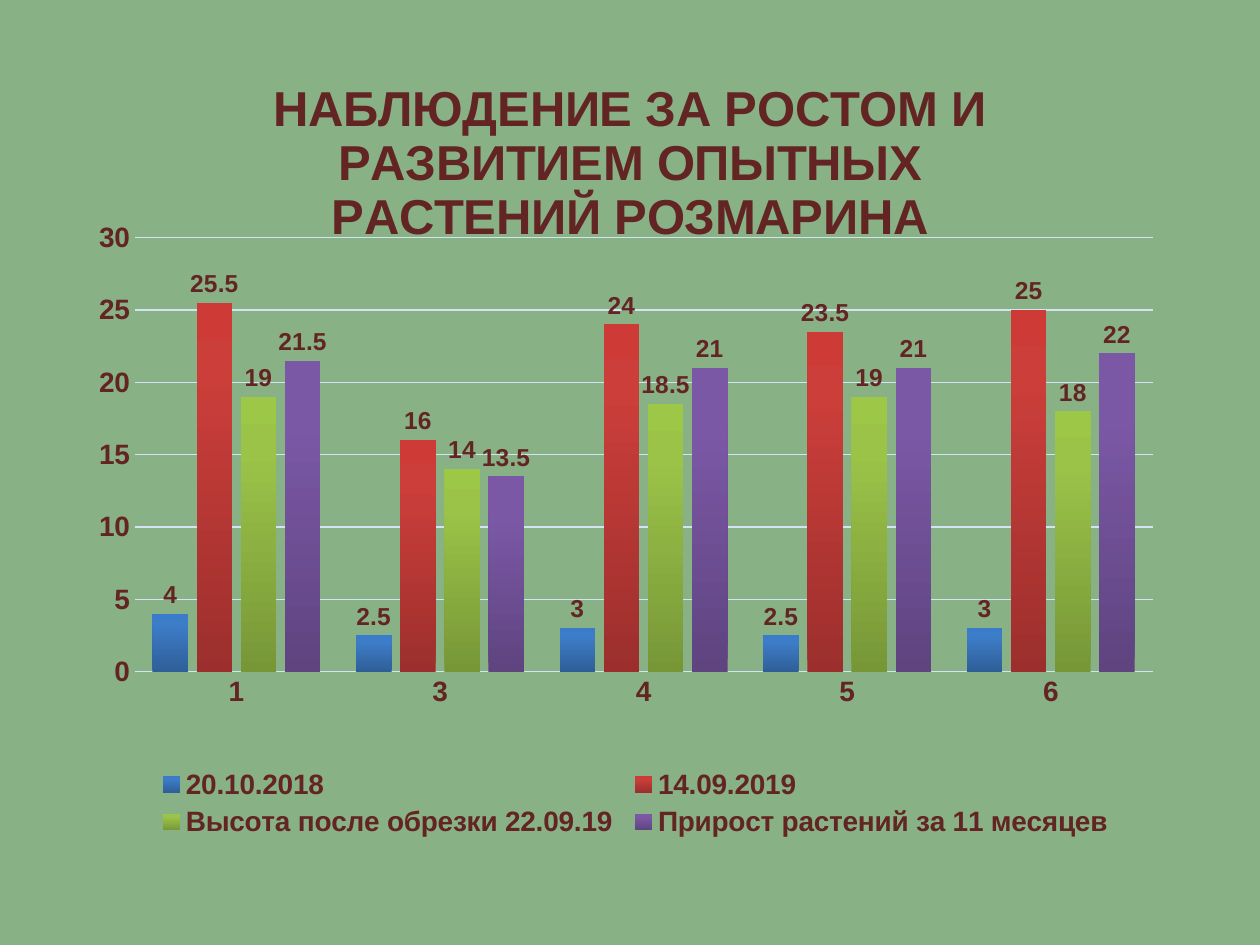
"""Build a slide with a clustered column chart of rosemary growth."""
from lxml import etree
from pptx import Presentation, util as u
from pptx.chart.data import CategoryChartData
from pptx.dml.color import RGBColor
from pptx.enum import chart as kinds
from pptx.oxml.ns import qn

COLOURS = {"background": "89B186", "text": "632523", "line": "D4E3F4"}
TITLE = "НАБЛЮДЕНИЕ ЗА РОСТОМ И РАЗВИТИЕМ ОПЫТНЫХ РАСТЕНИЙ РОЗМАРИНА"
PLANTS = ["1", "3", "4", "5", "6"]
SERIES = [
    ("20.10.2018", [4, 2.5, 3, 2.5, 3], ["2F5F99", "3D7CC7", "3A7CCB"]),
    ("14.09.2019", [25.5, 16, 24, 23.5, 25], ["9C2F2D", "CB3E3A", "CE3B37"]),
    ("Высота после обрезки 22.09.19", [19, 14, 18.5, 19, 18],
     ["779737", "9BC348", "9DC746"]),
    ("Прирост растений за 11 месяцев", [21.5, 13.5, 21, 21, 22],
     ["5F4480", "7B58A6", "7C57A8"]),
]
STOPS = [0, 80, 100]


def colour(name):
    """Return the named colour."""
    return RGBColor.from_string(COLOURS[name])


def style_font(font, size):
    """Set the bold chart font at a size."""
    font.name, font.size, font.bold = "Arial", u.Pt(size), True
    font.color.rgb = colour("text")


def style_line(line):
    """Set a thin pale line."""
    line.color.rgb = colour("line")
    line.width = u.Pt(0.75)


def place(parent, index, inner=False, **shares):
    """Give a chart part a place in shares of the chart's size."""
    for old in parent.findall(qn("c:layout")):
        parent.remove(old)
    layout = etree.Element(qn("c:layout"))
    manual = etree.SubElement(layout, qn("c:manualLayout"))
    settings = {"layoutTarget": "inner"} if inner else {}
    settings.update(xMode="edge", yMode="edge", **shares)
    for tag, value in settings.items():
        etree.SubElement(manual, qn(f"c:{tag}")).set("val", str(value))
    parent.insert(index, layout)


def fill_gradient(series, shades):
    """Fill a series with a gradient that rises from the bottom."""
    series.format.fill.gradient()
    gradient = series.format.fill._fill._gradFill
    for child in list(gradient):
        gradient.remove(child)
    stops = etree.SubElement(gradient, qn("a:gsLst"))
    for position, shade in zip(STOPS, shades):
        stop = etree.SubElement(stops, qn("a:gs"), pos=str(position * 1000))
        etree.SubElement(stop, qn("a:srgbClr"), val=shade)
    etree.SubElement(gradient, qn("a:lin"), ang=str(270 * 60000), scaled="0")


def style_series(series, shades):
    """Colour the columns and show their values."""
    fill_gradient(series, shades)
    series.invert_if_negative = False
    labels = series.data_labels
    labels.show_value = True
    labels.position = kinds.XL_LABEL_POSITION.OUTSIDE_END
    style_font(labels.font, 14)


def style_axes(chart):
    """Format both axes and the gridlines."""
    for axis in (chart.category_axis, chart.value_axis):
        axis.major_tick_mark = axis.minor_tick_mark = kinds.XL_TICK_MARK.NONE
        style_font(axis.tick_labels.font, 16)
    style_line(chart.category_axis.format.line)
    values = chart.value_axis
    values.minimum_scale, values.maximum_scale, values.major_unit = 0, 30, 5
    values.format.line.fill.background()
    values.has_major_gridlines = True
    style_line(values.major_gridlines.format.line)


def add_title(chart, words):
    """Write the chart title."""
    chart.has_title = True
    chart.chart_title.include_in_layout = False
    span = chart.chart_title.text_frame.paragraphs[0].add_run()
    span.text = words
    style_font(span.font, 28)


def add_legend(chart):
    """Add the legend below the plot."""
    chart.has_legend = True
    legend = chart.legend
    legend.position = kinds.XL_LEGEND_POSITION.BOTTOM
    legend.include_in_layout = False
    style_font(legend.font, 16)
    place(legend._element, 1, x=0.06, y=0.86, w=0.89, h=0.1)


def add_growth_chart(page, deck):
    """Add the column chart, centred across the slide."""
    data = CategoryChartData()
    data.categories = PLANTS
    for name, values, _ in SERIES:
        data.add_series(name, values)
    width, height = u.Inches(8.66), u.Inches(6.61)
    chart = page.shapes.add_chart(
        kinds.XL_CHART_TYPE.COLUMN_CLUSTERED, (deck.slide_width - width) // 2,
        u.Inches(0.36), width, height, data).chart
    chart.font.name, chart.font.size = "Calibri", u.Pt(10)
    add_title(chart, TITLE)
    add_legend(chart)
    style_axes(chart)
    plot = chart.plots[0]
    plot.gap_width, plot.overlap, plot.vary_by_categories = 100, -24, False
    for series, (_, _, shades) in zip(plot.series, SERIES):
        style_series(series, shades)
    area = chart.element.find(".//" + qn("c:plotArea"))
    place(area, 0, inner=True, x=0.046, y=0.231, w=0.933, h=0.521)


def main():
    """Build and save the deck."""
    deck = Presentation()
    deck.slide_width, deck.slide_height = u.Inches(10), u.Inches(7.5)
    page = deck.slides.add_slide(deck.slide_layouts[6])
    page.background.fill.solid()
    page.background.fill.fore_color.rgb = colour("background")
    add_growth_chart(page, deck)
    deck.save("out.pptx")


if __name__ == "__main__":
    main()
